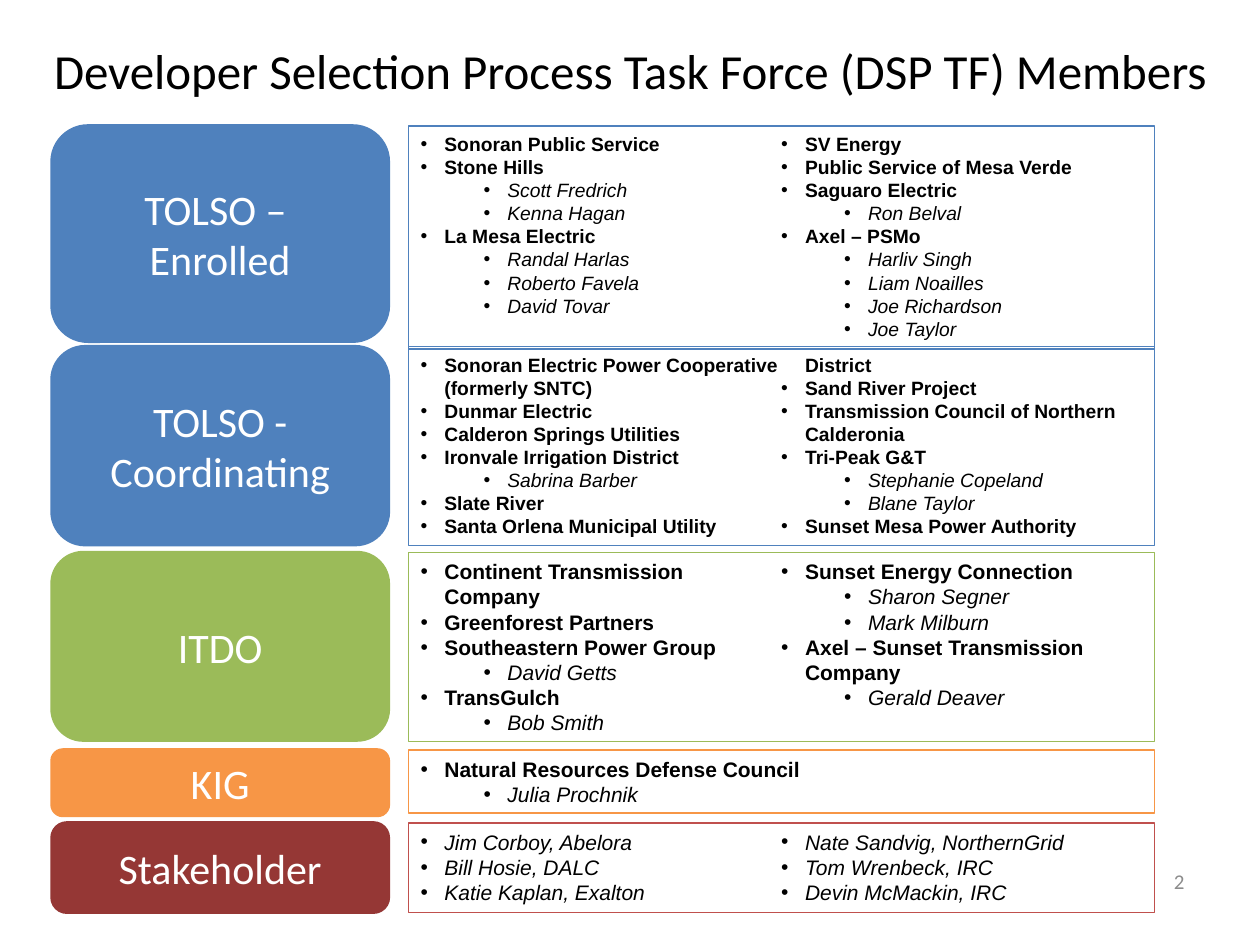
from pptx import Presentation
from pptx import util as u
from pptx.dml.color import RGBColor
from pptx.enum import shapes, text
from pptx.oxml.ns import qn
from lxml import etree

BLUE = RGBColor(0x4F, 0x81, 0xBD)
GREEN = RGBColor(0x9B, 0xBB, 0x59)
ORANGE = RGBColor(0xF7, 0x96, 0x46)
MAROON = RGBColor(0x95, 0x37, 0x35)
RED = RGBColor(0xC0, 0x50, 0x4D)
GREY = RGBColor(0x8C, 0x8C, 0x8C)
BLACK = RGBColor(0, 0, 0)
WHITE = RGBColor(255, 255, 255)

LABEL_LEFT, LABEL_WIDTH = 1.05, 6.78
LIST_LEFT, LIST_WIDTH = 8.23, 15.04
BULLET_INDENT, PERSON_INDENT = 0.48, 1.75

# Each member is an organisation followed by its people.
ENROLLED = [
    ("Sonoran Public Service",),
    ("Stone Hills", "Scott Fredrich", "Kenna Hagan"),
    ("La Mesa Electric", "Randal Harlas", "Roberto Favela", "David Tovar"),
    ("SV Energy",),
    ("Public Service of Mesa Verde",),
    ("Saguaro Electric", "Ron Belval"),
    ("Axel – PSMo", "Harliv Singh", "Liam Noailles", "Joe Richardson", "Joe Taylor"),
]
COORDINATING = [
    ("Sonoran Electric Power Cooperative (formerly SNTC)",),
    ("Dunmar Electric",),
    ("Calderon Springs Utilities",),
    ("Ironvale Irrigation District", "Sabrina Barber"),
    ("Slate River",),
    ("Santa Orlena Municipal Utility District",),
    ("Sand River Project",),
    ("Transmission Council of Northern Calderonia",),
    ("Tri-Peak G&T", "Stephanie Copeland", "Blane Taylor"),
    ("Sunset Mesa Power Authority",),
]
INDEPENDENT = [
    ("Continent Transmission Company",),
    ("Greenforest Partners",),
    ("Southeastern Power Group", "David Getts"),
    ("TransGulch", "Bob Smith"),
    ("Sunset Energy Connection", "Sharon Segner", "Mark Milburn"),
    ("Axel – Sunset Transmission Company", "Gerald Deaver"),
]
INTEREST_GROUP = [("Natural Resources Defense Council", "Julia Prochnik")]
STAKEHOLDERS = [
    ("Jim Corboy, Abelora",), ("Bill Hosie, DALC",), ("Katie Kaplan, Exalton",),
    ("Nate Sandvig, NorthernGrid",), ("Tom Wrenbeck, IRC",), ("Devin McMackin, IRC",),
]


def add_text(page, box, wording, size, colour, align):
    frame = page.shapes.add_textbox(*map(u.Cm, box)).text_frame
    frame.text = wording
    frame.vertical_anchor = text.MSO_ANCHOR.MIDDLE
    para = frame.paragraphs[0]
    para.alignment = align
    para.font.name, para.font.size = "Calibri", u.Pt(size)
    para.font.color.rgb = colour
    return frame


def add_panel(page, kind, box, line_colour, line_width):
    panel = page.shapes.add_shape(kind, *map(u.Cm, box))
    panel.shadow.inherit = False
    panel.line.color.rgb = line_colour
    panel.line.width = u.Pt(line_width)
    panel.text_frame.word_wrap = True
    return panel


def add_label(page, box, wording, colour):
    label = add_panel(page, shapes.MSO_SHAPE.ROUNDED_RECTANGLE, box, colour, 2)
    label.fill.solid()
    label.fill.fore_color.rgb = colour
    frame = label.text_frame
    frame.text = wording
    frame.vertical_anchor = text.MSO_ANCHOR.MIDDLE
    for para in frame.paragraphs:
        para.alignment = text.PP_ALIGN.CENTER
        para.font.name, para.font.size = "Calibri", u.Pt(24)
        para.font.color.rgb = WHITE


def add_bullet(para, indent):
    props = para._p.get_or_add_pPr()
    props.set("marL", str(u.Cm(indent)))
    props.set("indent", str(-u.Cm(BULLET_INDENT)))
    etree.SubElement(props, qn("a:buFont")).set("typeface", "Arial")
    etree.SubElement(props, qn("a:buChar")).set("char", "•")


def add_members(page, box, members, colour, size, columns, people_only, column_end):
    """Outlined list; extra space after column_end sends what follows to the next column."""
    panel = add_panel(page, shapes.MSO_SHAPE.RECTANGLE, box, colour, 0.75)
    panel.fill.background()
    frame = panel.text_frame
    frame.vertical_anchor = text.MSO_ANCHOR.TOP
    frame._txBody.bodyPr.set("numCol", str(columns))
    lines = [(name, min(place, 1)) for member in members
             for place, name in enumerate(member)]
    frame.text = "\n".join(name for name, _ in lines)
    for para, (name, level) in zip(frame.paragraphs, lines):
        para.level = level
        para.alignment = text.PP_ALIGN.LEFT
        if name == column_end:
            para.space_after = u.Pt(12)
        add_bullet(para, PERSON_INDENT if level else BULLET_INDENT)
        is_person = people_only or level == 1
        font = para.font
        font.name, font.size = "Arial", u.Pt(size)
        font.bold, font.italic = not is_person, is_person
        font.color.rgb = BLACK


def add_sector(page, top, label_height, list_height, wording, fill, members,
               outline=None, size=12, columns=2, people_only=False, column_end=None):
    add_label(page, (LABEL_LEFT, top, LABEL_WIDTH, label_height), wording, fill)
    add_members(page, (LIST_LEFT, top, LIST_WIDTH, list_height), members,
                outline or fill, size, columns, people_only, column_end)


def main():
    deck = Presentation()
    deck.slide_width, deck.slide_height = u.Cm(25.4), u.Cm(19.05)
    page = deck.slides.add_slide(deck.slide_layouts[6])

    title = add_text(page, (0.84, 0.69, 23.88, 1.45),
                     "Developer Selection Process Task Force (DSP TF) Members",
                     28, BLACK, text.PP_ALIGN.LEFT)
    title.word_wrap = False
    add_text(page, (18.21, 17.25, 5.92, 1.02), "2", 12, GREY, text.PP_ALIGN.RIGHT).word_wrap = True

    add_sector(page, 2.54, 4.34, 4.5, "TOLSO – \nEnrolled", BLUE, ENROLLED,
               size=11, column_end="David Tovar")
    add_sector(page, 6.99, 3.99, 4.01, "TOLSO - Coordinating", BLUE, COORDINATING, size=11)
    add_sector(page, 11.14, 3.78, 3.81, "ITDO", GREEN, INDEPENDENT)
    add_sector(page, 15.12, 1.32, 1.27, "KIG", ORANGE, INTEREST_GROUP, columns=1)
    add_sector(page, 16.59, 1.8, 1.8, "Stakeholder", MAROON, STAKEHOLDERS,
               outline=RED, people_only=True)
    deck.save("out.pptx")


if __name__ == "__main__":
    main()
